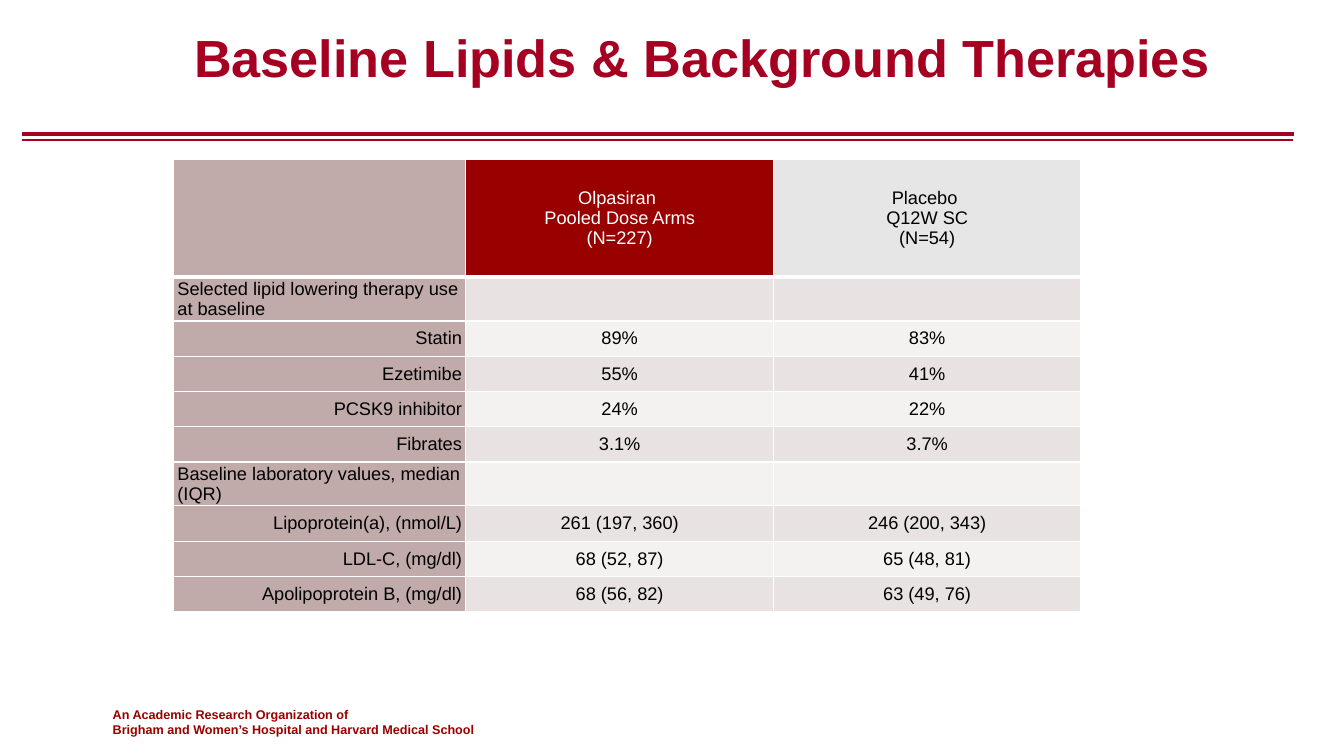
from pptx import Presentation, util as u
from pptx.dml.color import RGBColor
from pptx.enum import shapes, text
from pptx.oxml import parse_xml
from pptx.oxml.ns import nsdecls

CRIMSON = RGBColor(0xA5, 0x00, 0x21)
DARK_RED = RGBColor(0x99, 0x00, 0x00)
MAUVE = RGBColor(0xC0, 0xAA, 0xAA)
GREY = RGBColor(0xE6, 0xE6, 0xE6)
BAND_DARK = RGBColor(0xE8, 0xE2, 0xE2)
BAND_LIGHT = RGBColor(0xF4, 0xF1, 0xF1)
WHITE = RGBColor(0xFF, 0xFF, 0xFF)
BLACK = RGBColor(0x00, 0x00, 0x00)

LEFT, CENTER, RIGHT = text.PP_ALIGN.LEFT, text.PP_ALIGN.CENTER, text.PP_ALIGN.RIGHT

HEADER = ["", "Olpasiran \nPooled Dose Arms\n(N=227)", "Placebo \nQ12W SC\n(N=54)"]
ROWS = [
    ["Selected lipid lowering therapy use at baseline", "", ""],
    ["Statin", "89%", "83%"],
    ["Ezetimibe", "55%", "41%"],
    ["PCSK9 inhibitor", "24%", "22%"],
    ["Fibrates", "3.1%", "3.7%"],
    ["Baseline laboratory values, median (IQR)", "", ""],
    ["Lipoprotein(a), (nmol/L)", "261 (197, 360)", "246 (200, 343)"],
    ["LDL-C, (mg/dl)", "68 (52, 87)", "65 (48, 81)"],
    ["Apolipoprotein B, (mg/dl)", "68 (56, 82)", "63 (49, 76)"],
]


class SlideBuilder:
    font = "Arial"

    def __init__(self, slide):
        self.slide = slide

    def add_lines(self, frame, content, size, color, bold=False, align=LEFT):
        for i, line in enumerate(content.split("\n")):
            paragraph = frame.add_paragraph() if i else frame.paragraphs[0]
            paragraph.alignment = align
            paragraph.font.size = u.Pt(size)
            if line:
                run = paragraph.add_run()
                run.text = line
                run.font.name = self.font
                run.font.size = u.Pt(size)
                run.font.bold = bold
                run.font.color.rgb = color

    def textbox(self, box, content, size, color, align=LEFT, anchor=text.MSO_ANCHOR.TOP):
        frame = self.slide.shapes.add_textbox(*map(u.Inches, box)).text_frame
        frame.word_wrap = True
        frame.vertical_anchor = anchor
        self.add_lines(frame, content, size, color, True, align)

    def rule(self, y, right, width):
        line = self.slide.shapes.add_connector(
            shapes.MSO_CONNECTOR.STRAIGHT,
            u.Inches(0.22), u.Inches(y), u.Inches(right), u.Inches(y))
        line.line.color.rgb = CRIMSON
        line.line.width = u.Pt(width)
        line._element.spPr.append(parse_xml(f"<a:effectLst {nsdecls('a')}/>"))

    def borders(self, cell, bottom):
        props = cell._tc.get_or_add_tcPr()
        for side, width in (("L", 1), ("R", 1), ("T", 1), ("B", bottom)):
            props.append(parse_xml(
                f'<a:ln{side} {nsdecls("a")} w="{u.Pt(width)}"><a:solidFill>'
                f'<a:srgbClr val="{WHITE}"/></a:solidFill></a:ln{side}>'))

    def cell(self, cell, content, fill, color, align, bottom=1):
        cell.margin_left = cell.margin_right = u.Inches(0.04)
        cell.margin_top = cell.margin_bottom = 0
        cell.vertical_anchor = text.MSO_ANCHOR.MIDDLE
        # Borders come before the fill in the cell properties
        self.borders(cell, bottom)
        cell.fill.solid()
        cell.fill.fore_color.rgb = fill
        self.add_lines(cell.text_frame, content, 13, color, align=align)

    def table(self, left, top, widths, header_height, row_height):
        height = header_height + row_height * len(ROWS)
        table = self.slide.shapes.add_table(
            len(ROWS) + 1, len(widths), u.Inches(left), u.Inches(top),
            u.Inches(sum(widths)), u.Inches(height)).table
        for column, width in zip(table.columns, widths):
            column.width = u.Inches(width)
        for i, row in enumerate(table.rows):
            row.height = u.Inches(row_height if i else header_height)

        # Treatment arms
        header_styles = [(MAUVE, BLACK), (DARK_RED, WHITE), (GREY, BLACK)]
        for c, (label, (fill, color)) in enumerate(zip(HEADER, header_styles)):
            self.cell(table.cell(0, c), label, fill, color, CENTER, bottom=3)

        # Section rows have no values; other labels are right-aligned
        for r, (label, *values) in enumerate(ROWS, 1):
            align = RIGHT if any(values) else LEFT
            self.cell(table.cell(r, 0), label, MAUVE, BLACK, align)
            band = BAND_DARK if r % 2 else BAND_LIGHT
            for c, value in enumerate(values, 1):
                self.cell(table.cell(r, c), value, band, BLACK, CENTER)


def main():
    deck = Presentation()
    deck.slide_width, deck.slide_height = u.Inches(13.33), u.Inches(7.5)
    builder = SlideBuilder(deck.slides.add_slide(deck.slide_layouts[6]))

    # Double rule under the title
    builder.rule(1.33, 12.83, 3)
    builder.rule(1.39, 12.82, 1.5)

    # Footer
    builder.textbox((1.02, 6.96, 4.33, 0.4),
                    "An Academic Research Organization of\n"
                    "Brigham and Women’s Hospital and Harvard Medical School",
                    9, DARK_RED)

    # Title
    builder.textbox((1.11, -0.06, 11.71, 1.25), "Baseline Lipids & Background Therapies",
                    37.3, CRIMSON, CENTER, text.MSO_ANCHOR.MIDDLE)

    # Baseline table
    builder.table(1.72, 1.58, [2.9, 3.05, 3.05], 1.17, 0.35)

    deck.save("out.pptx")


if __name__ == "__main__":
    main()
